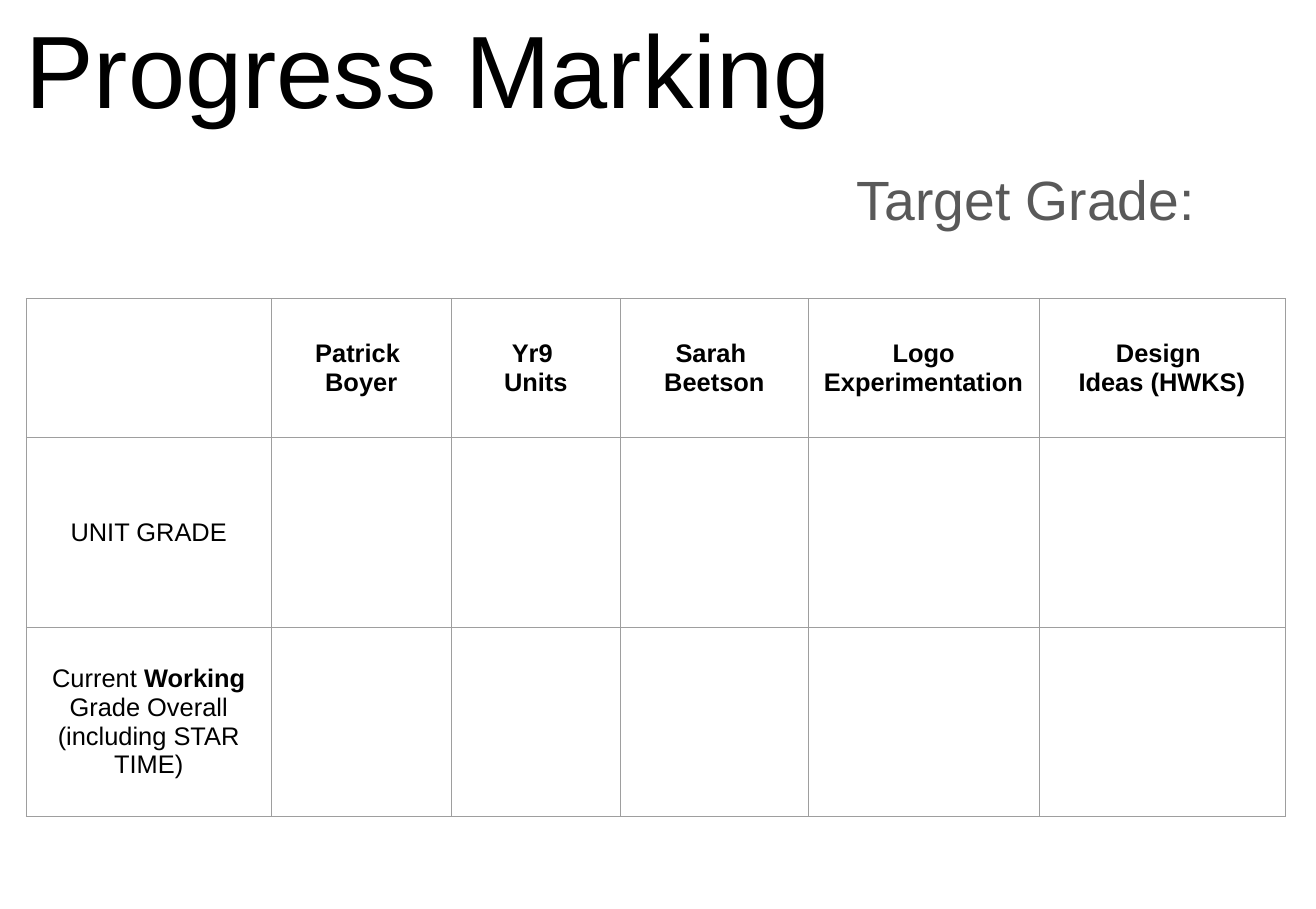
from lxml import etree
from pptx import Presentation
from pptx import util as u
from pptx.dml import color as colors
from pptx.enum import text
from pptx.oxml import ns

PX = 9144
BLACK = "000000"
GREY = "595959"
BORDER = "9E9E9E"

COLUMN_WIDTHS = [308, 226, 213, 236, 290, 309]
ROW_HEIGHTS = [175, 238, 238]
PROGRESS = [
    ["", "**Patrick **\n**Boyer**", "**Yr9 **\n**Units**", "**Sarah **\n**Beetson**",
     "**Logo Experimentation**", "**Design **\n**Ideas (HWKS)**"],
    ["UNIT GRADE"] + [""] * 5,
    ["Current **Working **Grade Overall (including STAR TIME)"] + [""] * 5,
]


def px(length):
    return u.Emu(length * PX)


def rgb(value):
    return colors.RGBColor.from_string(value)


def set_margins(item, margin):
    item.margin_left = item.margin_right = px(margin)
    item.margin_top = item.margin_bottom = px(margin)


def write(frame, content, size=23, color=BLACK, align=text.PP_ALIGN.LEFT, font="Arial"):
    for index, line in enumerate(content.split("\n")):
        para = frame.paragraphs[0] if index == 0 else frame.add_paragraph()
        para.alignment = align
        for position, words in enumerate(line.split("**")):
            if words:
                span = para.add_run()
                span.text = words
                span.font.name = font
                span.font.size = u.Pt(size)
                span.font.bold = position % 2 == 1
                span.font.color.rgb = rgb(color)


class Page:
    def __init__(self, deck, border=BORDER, border_width=0.75):
        self.slide = deck.slides.add_slide(deck.slide_layouts[6])
        self.border = border
        self.border_width = border_width

    def label(self, content, left, top, width, height, anchor=text.MSO_ANCHOR.TOP, **style):
        box = self.slide.shapes.add_textbox(px(left), px(top), px(width), px(height))
        frame = box.text_frame
        frame.word_wrap = True
        frame.auto_size = text.MSO_AUTO_SIZE.NONE
        frame.vertical_anchor = anchor
        set_margins(frame, 18)
        write(frame, content, **style)

    def outline(self, cell):
        properties = cell._tc.get_or_add_tcPr()
        for side in ("a:lnL", "a:lnR", "a:lnT", "a:lnB"):
            line = etree.SubElement(properties, ns.qn(side), w=str(u.Pt(self.border_width)))
            fill = etree.SubElement(line, ns.qn("a:solidFill"))
            etree.SubElement(fill, ns.qn("a:srgbClr"), val=self.border)

    def table(self, rows, left, top, widths, heights):
        grid = self.slide.shapes.add_table(
            len(heights), len(widths), px(left), px(top), px(sum(widths)), px(sum(heights))
        ).table
        grid.first_row = grid.horz_banding = False
        for column, width in zip(grid.columns, widths):
            column.width = px(width)
        for row, height, contents in zip(grid.rows, heights, rows):
            row.height = px(height)
            for cell, content in zip(row.cells, contents):
                cell.vertical_anchor = text.MSO_ANCHOR.MIDDLE
                set_margins(cell, 10)
                self.outline(cell)
                cell.fill.background()
                write(cell.text_frame, content, align=text.PP_ALIGN.CENTER)


def main():
    deck = Presentation()
    deck.slide_width, deck.slide_height = px(1654), px(1142)
    page = Page(deck)
    page.label("Progress Marking", 14, 34, 1151, 146, anchor=text.MSO_ANCHOR.BOTTOM, size=93)
    page.label("Target Grade:", 1059, 189, 595, 176, size=50, color=GREY)
    page.table(PROGRESS, 33, 375, COLUMN_WIDTHS, ROW_HEIGHTS)
    deck.save("out.pptx")


if __name__ == "__main__":
    main()
